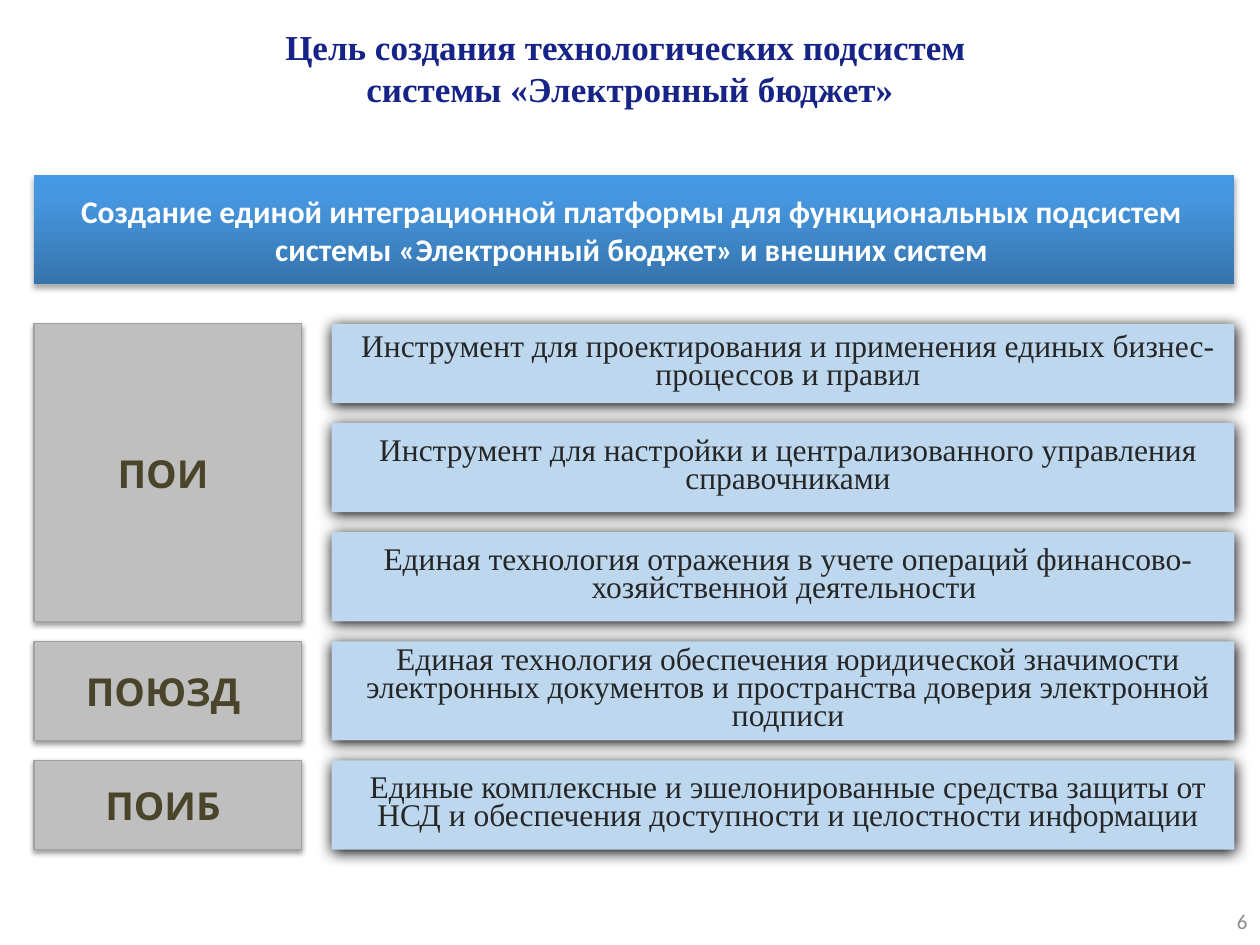
from dataclasses import dataclass
from typing import NamedTuple

from lxml.etree import SubElement as Sub
from pptx import Presentation
from pptx.dml.color import RGBColor as Rgb
from pptx.enum.shapes import MSO_SHAPE as Kind
from pptx.enum.text import MSO_ANCHOR as Anchor, MSO_AUTO_SIZE as Fit, PP_ALIGN as Align
from pptx.oxml.ns import qn
from pptx.util import Cm, Emu, Inches, Pt

UNIT = Cm(0.2)
GAP = 2
LEFT, TOP = Inches(0.27), Inches(2.57)
SIDE, MAIN, GUT = 27, 91, 3


class Font(NamedTuple):
    face: str
    size: int
    color: str
    bold: bool = False


class Shade(NamedTuple):
    alpha: int
    blur: float
    dist: float


class Style(NamedTuple):
    font: Font
    shade: Shade
    pad: tuple[float, float, float, float]
    fill: str = ""
    line: str = ""
    lead: int = 0


class Box(NamedTuple):
    x: int
    y: int
    w: int
    h: int


@dataclass(frozen=True)
class Theme:
    title: Font = Font("Times New Roman", 20, "162387", True)
    page: Font = Font("Calibri", 12, "8C8C8C")
    grad: tuple = ((0, "3674AD"), (80, "4697E0"), (100, "4498E4"))
    head: Style = Style(Font("Calibri", 18, "FFFFFF", True), Shade(32, 3.5, 2.2),
                        (0.04, 0.05, 0.08, 0.05))
    goal: Style = Style(Font("Times New Roman", 18, "262626"), Shade(100, 8.5, 1),
                        (0.08, 0.05, 0, 0.05), "BDD7EE", lead=16)
    name: Style = Style(Font("Karla", 22, "4A452A", True), Shade(38, 3.1, 1.6),
                        (0.14, 0.07, 0.14, 0.07), "BFBFBF", "A1A1A1")


@dataclass(frozen=True)
class Group:
    name: str
    goals: tuple[tuple[str, int], ...]

    @property
    def rows(self) -> int:
        return sum(h for _, h in self.goals) + GAP * (len(self.goals) - 1)


THEME = Theme()
GROUPS = (
    Group("ПОИ ", (
        ("Инструмент для проектирования и применения единых бизнес-процессов и правил", 8),
        ("Инструмент для настройки и централизованного управления справочниками", 9),
        ("Единая технология отражения в учете операций финансово-хозяйственной деятельности ", 9),
    )),
    Group("ПОЮЗД ", (
        ("Единая технология обеспечения юридической значимости электронных документов "
         "и пространства доверия электронной подписи", 10),
    )),
    Group("ПОИБ ", (
        ("Единые комплексные и эшелонированные средства защиты от НСД и обеспечения "
         "доступности и целостности информации", 9),
    )),
)


def write(frame, lines: tuple[str, ...], font: Font, align=Align.CENTER, lead: int = 0) -> None:
    frame.word_wrap = True
    frame.auto_size = Fit.NONE
    frame.vertical_anchor = Anchor.MIDDLE
    for i, text in enumerate(lines):
        para = frame.add_paragraph() if i else frame.paragraphs[0]
        para.alignment = align
        if lead:
            para.line_spacing = Pt(lead)
        run = para.add_run()
        run.text = text
        run.font.name = font.face
        run.font.size = Pt(font.size)
        run.font.bold = font.bold
        run.font.color.rgb = Rgb.from_string(font.color)


def tint(node, color: str):
    return Sub(node, qn("a:srgbClr"), val=color)


def cast(shape, shade: Shade) -> None:
    shape.shadow.inherit = False
    effect = shape._element.spPr.find(qn("a:effectLst"))
    outer = Sub(effect, qn("a:outerShdw"), blurRad=str(Pt(shade.blur)),
                dist=str(Pt(shade.dist)), dir="5400000", rotWithShape="0")
    Sub(tint(outer, "000000"), qn("a:alpha"), val=str(shade.alpha * 1000))


def blend(shape, stops: tuple) -> None:
    shape.fill.gradient()
    shape.fill.gradient_angle = 90
    group = shape._element.spPr.find(qn("a:gradFill")).find(qn("a:gsLst"))
    for old in list(group):
        group.remove(old)
    for pos, color in stops:
        tint(Sub(group, qn("a:gs"), pos=str(pos * 1000)), color)


def panel(slide, box: Box, text: str, style: Style) -> None:
    shape = slide.shapes.add_shape(Kind.RECTANGLE, *(Emu(n) for n in box))
    if style.fill:
        shape.fill.solid()
        shape.fill.fore_color.rgb = Rgb.from_string(style.fill)
    else:
        blend(shape, THEME.grad)
    if style.line:
        shape.line.color.rgb = Rgb.from_string(style.line)
        shape.line.width = Pt(0.75)
    else:
        shape.line.fill.background()
    cast(shape, style.shade)
    frame = shape.text_frame
    (frame.margin_left, frame.margin_top,
     frame.margin_right, frame.margin_bottom) = map(Inches, style.pad)
    write(frame, (text,), style.font, lead=style.lead)


def cell(col: int, row: int, cols: int, rows: int) -> Box:
    return Box(LEFT + col * UNIT, TOP + row * UNIT, cols * UNIT, rows * UNIT)


def main() -> None:
    deck = Presentation()
    deck.slide_width, deck.slide_height = Inches(10), Inches(7.5)
    wide, high = deck.slide_width, deck.slide_height
    slide = deck.slides.add_slide(deck.slide_layouts[5])

    title = slide.shapes.title
    title.left, title.top, title.width, title.height = 0, 0, wide, Inches(1.07)
    write(title.text_frame, ("Цель создания технологических подсистем ",
                             "системы «Электронный бюджет»"), THEME.title)

    page = slide.shapes.add_textbox(int(wide * 0.94), int(high * 0.95),
                                    int(wide * 0.06), int(high * 0.05))
    write(page.text_frame, ("6",), THEME.page, Align.RIGHT)

    panel(slide, cell(0, -15, SIDE + GUT + MAIN, 11),
          "Создание единой интеграционной платформы для функциональных подсистем "
          "системы «Электронный бюджет» и внешних систем", THEME.head)

    row = 0
    for group in GROUPS:
        panel(slide, cell(0, row, SIDE, group.rows), group.name, THEME.name)
        for text, rows in group.goals:
            panel(slide, cell(SIDE + GUT, row, MAIN, rows), text, THEME.goal)
            row += rows + GAP

    deck.save("out.pptx")


if __name__ == "__main__":
    main()
